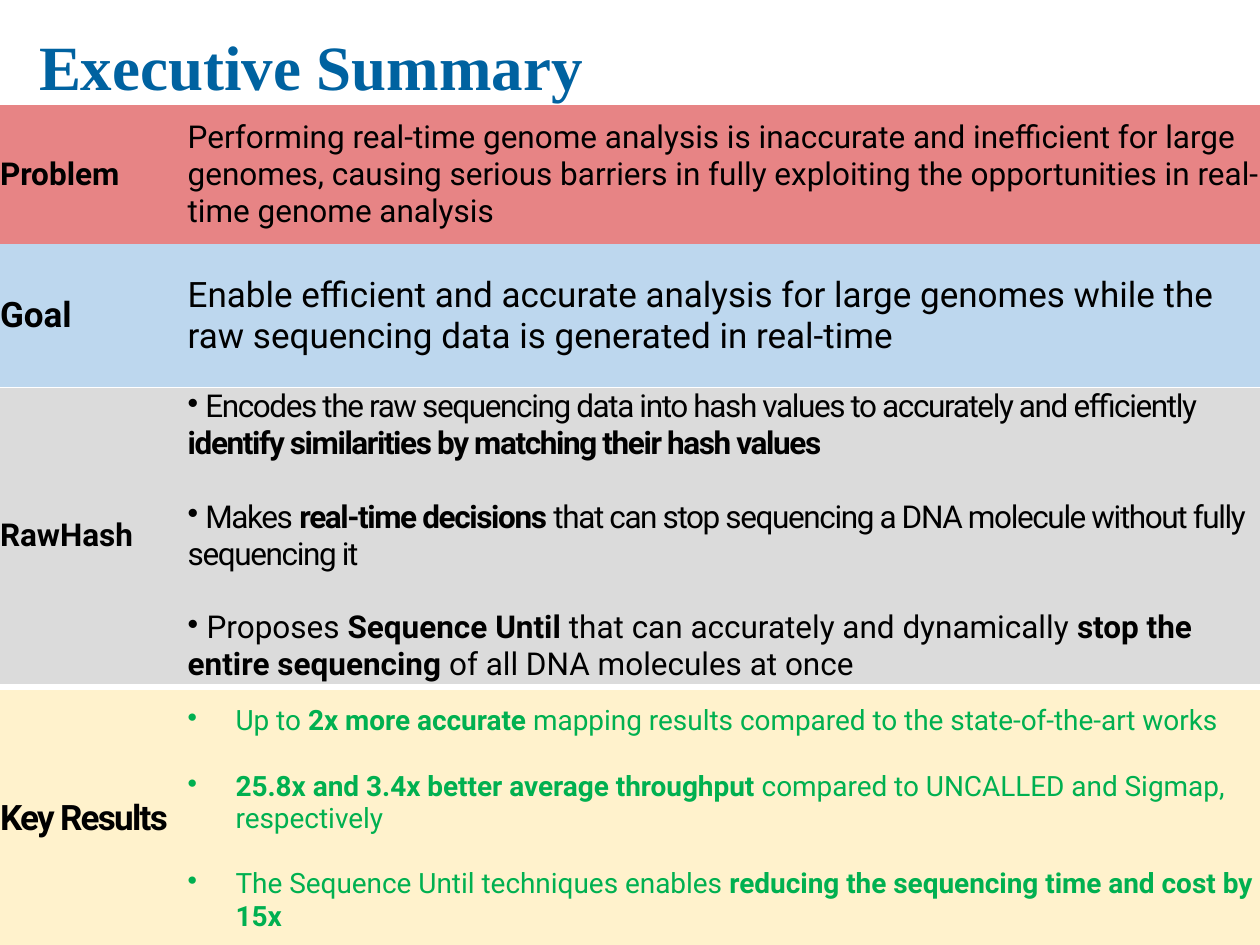
from dataclasses import dataclass

from lxml import etree
from pptx import Presentation
from pptx.dml.color import RGBColor
from pptx.enum.text import MSO_ANCHOR, MSO_AUTO_SIZE, PP_ALIGN
from pptx.oxml.ns import qn
from pptx.util import Inches, Pt

LEFT = PP_ALIGN.LEFT
MIDDLE = MSO_ANCHOR.MIDDLE
FIXED = MSO_AUTO_SIZE.NONE
PLAIN = "{2D5ABB26-0587-4C30-8999-92F81FD0307C}"


@dataclass(frozen=True)
class Theme:
    """Colours, fonts and type sizes of the slide."""
    head: str = "Times New Roman"
    body: str = "Roboto"
    blue: str = "0062A0"
    black: str = "000000"
    green: str = "00B050"
    red: str = "E78485"
    sky: str = "BDD7EE"
    grey: str = "DBDBDB"
    cream: str = "FFF2CC"
    title: int = 36
    large: int = 20
    base: int = 18
    small: int = 16


THEME = Theme()
LABEL = 1.44
INDENT = 0.38

BANDS = [
    dict(top=0.83, high=1.12, fill=THEME.red, label="Problem", lines=[
        "Performing real-time genome analysis is inaccurate and inefficient for "
        "large genomes, causing serious barriers in fully exploiting the "
        "opportunities in real-time genome analysis"]),
    dict(top=1.94, high=1.13, fill=THEME.sky, label="Goal",
         lead=dict(size=THEME.large), form=dict(size=THEME.large), lines=[
             "Enable efficient and accurate analysis for large genomes while the "
             "raw sequencing data is generated in real-time"]),
    dict(top=3.08, high=2.34, fill=THEME.grey, label="RawHash",
         form=dict(bullet=True, gap=21.1, track=(-0.8, -0.8, 0)), lines=[
             " Encodes the raw sequencing data into hash values to accurately and "
             "efficiently **identify similarities by matching their hash values**",
             " Makes **real-time decisions** that can stop sequencing a DNA "
             "molecule without fully sequencing it",
             " Proposes **Sequence Until** that can accurately and dynamically "
             "**stop the entire sequencing **of all DNA molecules at once"]),
    dict(top=5.48, high=2.04, fill=THEME.cream, label="Key Results",
         lead=dict(size=THEME.large, track=(-1,)),
         form=dict(size=THEME.small, color=THEME.green, bullet=True,
                   indent=INDENT, gap=18.75), lines=[
             "Up to **2x more accurate** mapping results compared to the "
             "state-of-the-art works",
             "**25.8x and 3.4x better average throughput** compared to UNCALLED "
             "and Sigmap, respectively",
             "The Sequence Until techniques enables **reducing the sequencing "
             "time and cost by 15x**"]),
]


def mark(para, indent):
    """Give a paragraph a round bullet and a hanging indent."""
    props = para._p.get_or_add_pPr()
    props.set("marL", str(Inches(indent)))
    props.set("indent", str(-Inches(indent)))
    etree.SubElement(props, qn("a:buChar")).set("char", "•")


def write(frame, lines, font=THEME.body, size=THEME.base, color=THEME.black,
          bullet=False, indent=0, gap=0, track=()):
    """Write lines of text, with bold parts held between double stars."""
    for row, line in enumerate(lines):
        para = frame.add_paragraph() if row else frame.paragraphs[0]
        para.alignment = LEFT
        if bullet:
            mark(para, indent)
        if row and gap:
            para.space_before = Pt(gap)
        for part, text in enumerate(line.split("**")):
            if not text:
                continue
            run = para.add_run()
            run.text = text
            run.font.name = font
            run.font.size = Pt(size)
            run.font.bold = part % 2 == 1
            run.font.color.rgb = RGBColor.from_string(color)
            if track and track[row]:
                run._r.get_or_add_rPr().set("spc", str(round(track[row] * 100)))


def heading(slide, box, text):
    """Place the slide title in its box."""
    shape = slide.shapes.title
    shape.left, shape.top, shape.width, shape.height = map(Inches, box)
    frame = shape.text_frame
    frame.auto_size = FIXED
    frame.vertical_anchor = MIDDLE
    write(frame, [f"**{text}**"], font=THEME.head, size=THEME.title,
          color=THEME.blue)


def band(slide, box, fill, label, lines, lead=None, form=None):
    """Place a one-row table with a label and its text in a box."""
    table = slide.shapes.add_table(1, 2, *map(Inches, box)).table
    table.first_row = table.horz_banding = False
    table._tbl.tblPr.find(qn("a:tableStyleId")).text = PLAIN
    widths = (LABEL, box[2] - LABEL)
    texts = ([f"**{label}**"], lines)
    for col, (width, text, style) in enumerate(zip(widths, texts, (lead, form))):
        table.columns[col].width = Inches(width)
        cell = table.cell(0, col)
        cell.fill.solid()
        cell.fill.fore_color.rgb = RGBColor.from_string(fill)
        cell.vertical_anchor = MIDDLE
        cell.margin_left = Inches(0.05 * col)
        cell.margin_right = cell.margin_top = cell.margin_bottom = 0
        write(cell.text_frame, text, **(style or {}))


def summary(deck):
    """Build the summary slide."""
    slide = deck.slides.add_slide(deck.slide_layouts[5])
    heading(slide, (0.21, 0.1, 9.62, 0.84), "Executive Summary")
    for item in BANDS:
        parts = dict(item)
        box = (0, parts.pop("top"), 10, parts.pop("high"))
        band(slide, box, **parts)


def main():
    """Make and save the deck."""
    deck = Presentation()
    deck.slide_width, deck.slide_height = Inches(10), Inches(7.5)
    summary(deck)
    deck.save("out.pptx")


if __name__ == "__main__":
    main()
